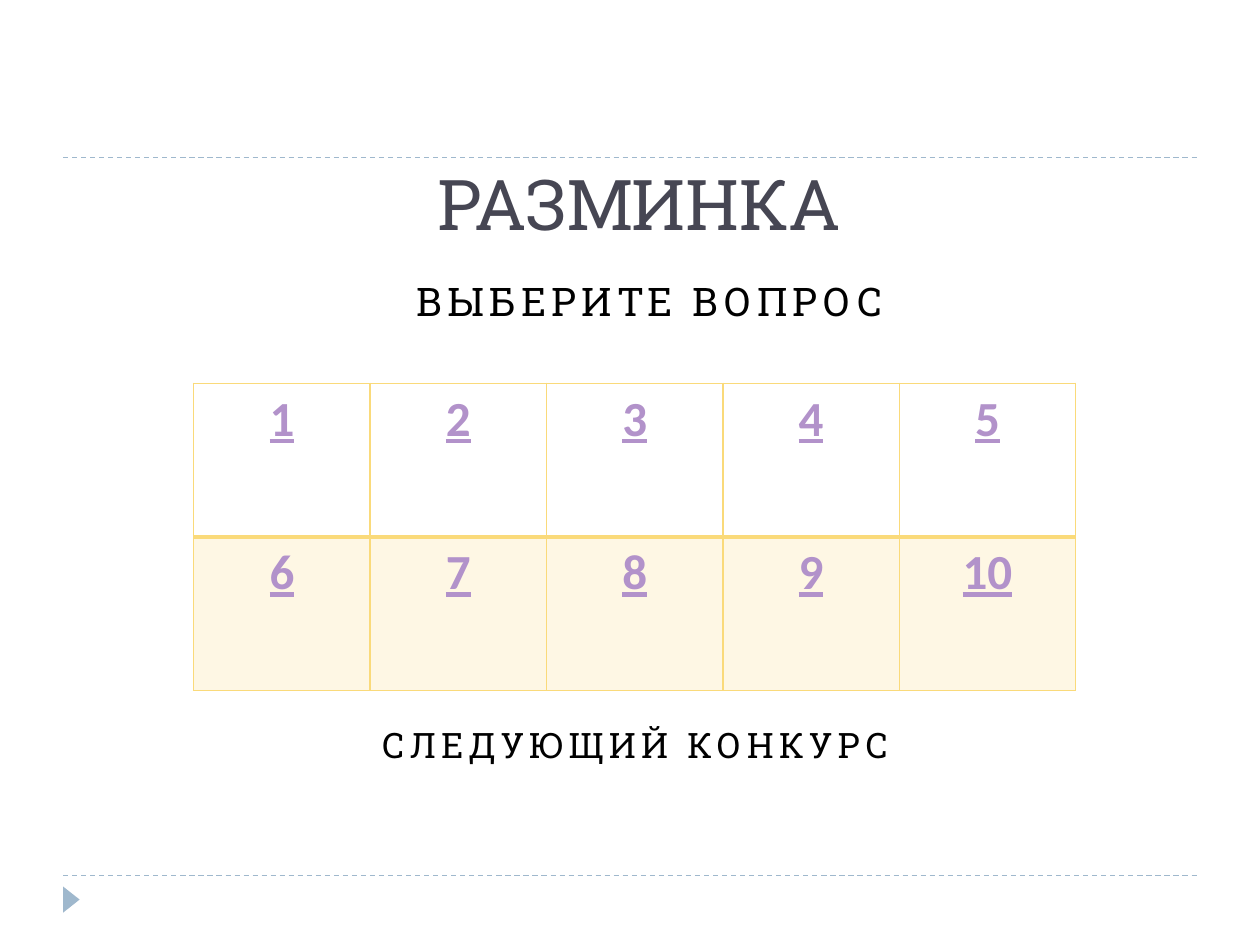
from dataclasses import dataclass

from lxml.etree import SubElement
from pptx import Presentation
from pptx.dml.color import RGBColor
from pptx.enum.dml import MSO_LINE
from pptx.enum.shapes import MSO_CONNECTOR, MSO_SHAPE
from pptx.enum.text import MSO_ANCHOR, MSO_AUTO_SIZE, PP_ALIGN
from pptx.oxml.ns import qn
from pptx.util import Pt


@dataclass(frozen=True)
class Theme:
    heading_font: str = "Roboto Slab"
    number_font: str = "Calibri"
    title_color: str = "464653"
    text_color: str = "000000"
    number_color: str = "B292CA"
    grid_color: str = "FADA7A"
    rule_color: str = "9FB8CD"
    title_size: float = 40
    prompt_size: float = 22.5
    next_size: float = 20
    number_size: float = 28


THEME = Theme()


@dataclass(frozen=True)
class Box:
    left: float
    top: float
    width: float
    height: float

    def lengths(self):
        return [Pt(v) for v in (self.left, self.top, self.width, self.height)]


def write(frame, text, *, font, size, color, bold=False, underline=False, spacing=0):
    paragraph = frame.paragraphs[0]
    paragraph.alignment = PP_ALIGN.CENTER
    run = paragraph.add_run()
    run.text = text
    run.font.name = font
    run.font.size = Pt(size)
    run.font.color.rgb = RGBColor.from_string(color)
    run.font.bold = bold
    run.font.underline = underline
    if spacing:
        run.font._element.set("spc", str(spacing * 100))


def anchor_bottom(frame):
    frame.word_wrap = True
    frame.auto_size = MSO_AUTO_SIZE.NONE
    frame.vertical_anchor = MSO_ANCHOR.BOTTOM
    frame.margin_top = 0
    frame.margin_bottom = Pt(2)


def place_title(slide, box, text):
    title = slide.shapes.title
    title.left, title.top, title.width, title.height = box.lengths()
    anchor_bottom(title.text_frame)
    write(title.text_frame, text, font=THEME.heading_font,
          size=THEME.title_size, color=THEME.title_color)


def add_caption(slide, box, text, size):
    caption = slide.shapes.add_textbox(*box.lengths())
    anchor_bottom(caption.text_frame)
    write(caption.text_frame, text, font=THEME.heading_font, size=size,
          color=THEME.text_color, spacing=3)


def add_rule(slide, left, right, y):
    rule = slide.shapes.add_connector(
        MSO_CONNECTOR.STRAIGHT, Pt(left), Pt(y), Pt(right), Pt(y))
    rule.line.color.rgb = RGBColor.from_string(THEME.rule_color)
    rule.line.width = Pt(0.75)
    rule.line.dash_style = MSO_LINE.DASH
    SubElement(rule._element.spPr, qn("a:effectLst"))


def add_frame(slide, box):
    """Draw the dashed rules at both ends of the box and the marker below it."""
    bottom = box.top + box.height
    for y in (box.top, bottom):
        add_rule(slide, box.left, box.left + box.width, y)
    marker = slide.shapes.add_shape(
        MSO_SHAPE.ISOSCELES_TRIANGLE,
        *Box(box.left - 2.75, bottom + 8.9, 15, 9.5).lengths())
    marker.rotation = 90
    marker.shadow.inherit = False
    marker.fill.solid()
    marker.fill.fore_color.rgb = RGBColor.from_string(THEME.rule_color)
    marker.line.fill.background()


def add_solid_fill(parent, color):
    fill = SubElement(parent, qn("a:solidFill"))
    return SubElement(fill, qn("a:srgbClr"), val=color)


def format_cell(cell, tinted, top_width, bottom_width):
    properties = cell._tc.get_or_add_tcPr()
    widths = {"a:lnL": 1, "a:lnR": 1, "a:lnT": top_width, "a:lnB": bottom_width}
    for tag, width in widths.items():
        border = SubElement(properties, qn(tag), w=str(Pt(width)))
        add_solid_fill(border, THEME.grid_color)
    if tinted:
        tint = add_solid_fill(properties, THEME.grid_color)
        SubElement(tint, qn("a:alpha"), val="20000")
    else:
        cell.fill.background()


def add_question_grid(slide, box, rows, columns):
    grid = slide.shapes.add_table(rows, columns, *box.lengths()).table
    grid.first_row = grid.horz_banding = False
    for column in grid.columns:
        column.width = Pt(box.width / columns)
    for row in grid.rows:
        row.height = Pt(box.height / rows)
    for index, cell in enumerate(grid.iter_cells()):
        row = index // columns
        write(cell.text_frame, str(index + 1), font=THEME.number_font,
              size=THEME.number_size, color=THEME.number_color,
              bold=True, underline=True)
        format_cell(cell, tinted=row % 2 == 1,
                    top_width=2 if row > 0 else 1,
                    bottom_width=2 if row < rows - 1 else 1)


def build_question_slide(presentation):
    slide = presentation.slides.add_slide(presentation.slide_layouts[5])
    add_frame(slide, Box(36, 90, 648, 410.4))
    place_title(slide, Box(113, 87.8, 504, 54), "РАЗМИНКА")
    add_question_grid(slide, Box(110.7, 219, 504, 175.7), rows=2, columns=5)
    add_caption(slide, Box(110.7, 407.5, 504.7, 31.7),
                "СЛЕДУЮЩИЙ КОНКУРС", THEME.next_size)
    add_caption(slide, Box(109.4, 157.7, 524.2, 29.5),
                "ВЫБЕРИТЕ ВОПРОС", THEME.prompt_size)


def main():
    presentation = Presentation()
    presentation.slide_width = Pt(720)
    presentation.slide_height = Pt(540)
    build_question_slide(presentation)
    presentation.save("out.pptx")


if __name__ == "__main__":
    main()
